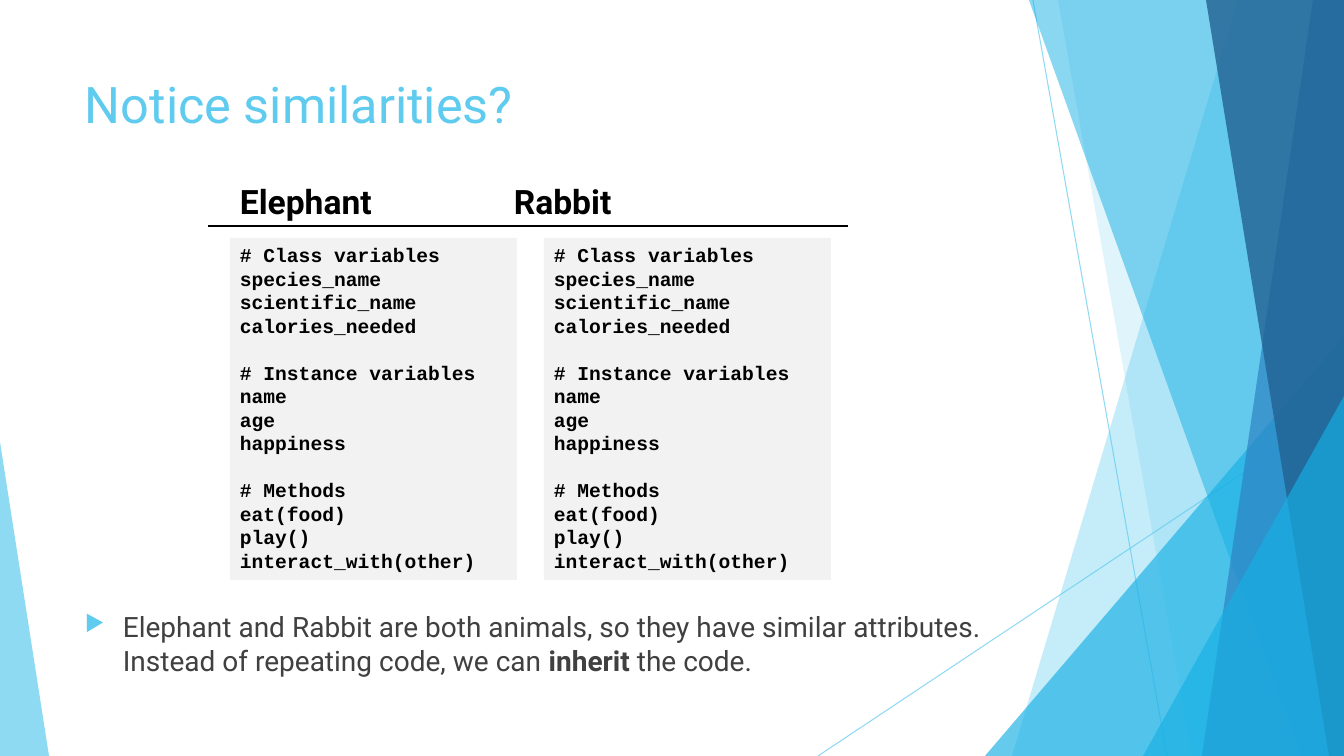
import pptx
import pptx.util
import pptx.dml.color
import pptx.enum.shapes
import pptx.enum.text
import pptx.oxml
import pptx.oxml.ns
import lxml.etree

W, H = 1344, 756
SCALE = 12192000 / W
SKY, CYAN, BLUE, NAVY = "5FCBEF", "17B0E4", "2E83C3", "226292"
CODE = [
    ["# Class variables", "species_name", "scientific_name", "calories_needed"],
    ["# Instance variables", "name", "age", "happiness"],
    ["# Methods", "eat(food)", "play()", "interact_with(other)"],
]


def px(n):
    return pptx.util.Emu(round(n * SCALE))


def rgb(code):
    return pptx.dml.color.RGBColor.from_string(code)


def sub(node, tag, **attrs):
    child = lxml.etree.SubElement(node, pptx.oxml.ns.qn(tag))
    for key, val in attrs.items():
        child.set(key, str(val))
    return child


def fade(fill, alpha):
    """Set the opacity of a solid fill, in percent."""
    color = fill._xPr.find(".//" + pptx.oxml.ns.qn("a:srgbClr"))
    sub(color, "a:alpha", val=alpha * 1000)


def paint(shape, color, alpha=100):
    shape.shadow.inherit = False
    shape.fill.solid()
    shape.fill.fore_color.rgb = rgb(color)
    shape.line.fill.background()
    if alpha < 100:
        fade(shape.fill, alpha)


def rule(slide, x1, y1, x2, y2, color, width, alpha=100):
    line = slide.shapes.add_connector(
        pptx.enum.shapes.MSO_CONNECTOR.STRAIGHT, px(x1), px(y1), px(x2), px(y2))
    line.line.color.rgb = rgb(color)
    line.line.width = pptx.util.Pt(width)
    if alpha < 100:
        fade(line.line.fill, alpha)
    sub(line._element.spPr, "a:effectLst")


def band(slide, top, foot, color, alpha):
    """Fill from a slanted left side to the right edge of the slide."""
    form = slide.shapes.build_freeform(top, 0, SCALE)
    form.add_line_segments([(W, 0), (W, H), (foot, H)], close=True)
    paint(form.convert_to_shape(), color, alpha)


def wedge(slide, x, y, w, tip, color, alpha):
    """Stand a right triangle on the bottom edge of the slide."""
    shape = slide.shapes.add_shape(
        pptx.enum.shapes.MSO_SHAPE.ISOSCELES_TRIANGLE, px(x), px(y), px(w), px(H - y))
    shape.adjustments[0] = tip
    paint(shape, color, alpha)


def decor(slide):
    rule(slide, 1033, 0, 1167, H, SKY, 0.75, 70)
    rule(slide, W, 406, 818, H, SKY, 0.75, 70)
    band(slide, 1238, 1012, SKY, 36)
    band(slide, 1058, 1192, SKY, 20)
    wedge(slide, 985, 336, 359, 1, CYAN, 66)
    band(slide, 1029, 1301, CYAN, 50)
    band(slide, 1313, 1202, BLUE, 70)
    band(slide, 1206, 1329, NAVY, 80)
    wedge(slide, 1143, 396, 201, 1, CYAN, 66)
    wedge(slide, 0, 442, 49, 0, SKY, 70)


def style(para, font, size, color, bold=False):
    for run in para.runs:
        run.font.name = font
        run.font.size = pptx.util.Pt(size)
        run.font.color.rgb = rgb(color)
        run.font.bold = bold


def label(slide, x, y, w, h, text, size, color, bold=False):
    """Add a text box and return its paragraph."""
    frame = slide.shapes.add_textbox(px(x), px(y), px(w), px(h)).text_frame
    frame.word_wrap = True
    frame.text = text
    para = frame.paragraphs[0]
    style(para, "Roboto", size, color, bold)
    return para


def heads(slide, x, y, w, h):
    """Name both classes, the second at a tab stop."""
    para = label(slide, x, y, w, h, "Elephant\tRabbit", 24, "000000", True)
    tabs = sub(para._p.get_or_add_pPr(), "a:tabLst")
    sub(tabs, "a:tab", pos=px(274), algn="l")


def panel(slide, x, y, w, h):
    box = slide.shapes.add_shape(
        pptx.enum.shapes.MSO_SHAPE.RECTANGLE, px(x), px(y), px(w), px(h))
    paint(box, "F2F2F2")
    frame = box.text_frame
    frame.word_wrap = True
    frame.vertical_anchor = pptx.enum.text.MSO_ANCHOR.TOP
    frame.text = "\n".join(line for part in CODE for line in part)
    pitch = pptx.util.Pt(16.8)
    starts = [part[0] for part in CODE[1:]]
    for para in frame.paragraphs:
        para.alignment = pptx.enum.text.PP_ALIGN.LEFT
        para.line_spacing = pitch
        if para.text in starts:
            para.space_before = pitch
        style(para, "Courier New", 14, "000000", True)


def bullet(slide, x, y, w, h):
    para = label(slide, x, y, w, h,
                 "Elephant and Rabbit are both animals, so they have similar "
                 "attributes. Instead of repeating code, we can ", 20, "404040")
    for text in ("inherit", " the code."):
        para.add_run().text = text
    style(para, "Roboto", 20, "404040")
    para.runs[1].font.bold = True
    props = para._p.get_or_add_pPr()
    props.set("marL", str(px(38)))
    props.set("indent", str(px(-38)))
    sub(sub(props, "a:buClr"), "a:srgbClr", val=SKY)
    sub(props, "a:buSzPct", val=80000)
    sub(props, "a:buChar", char="▶")


def main():
    deck = pptx.Presentation()
    deck.slide_width, deck.slide_height = px(W), px(H)
    slide = deck.slides.add_slide(deck.slide_layouts[6])
    decor(slide)
    label(slide, 75, 68, 948, 145, "Notice similarities?", 36, SKY)
    bullet(slide, 75, 605, 948, 75)
    for col in range(2):
        panel(slide, 230 + col * 314, 238, 287, 342)
    heads(slide, 230, 176, 447, 50)
    rule(slide, 208, 226, 848, 226, "000000", 1.5)
    deck.save("out.pptx")


if __name__ == "__main__":
    main()
